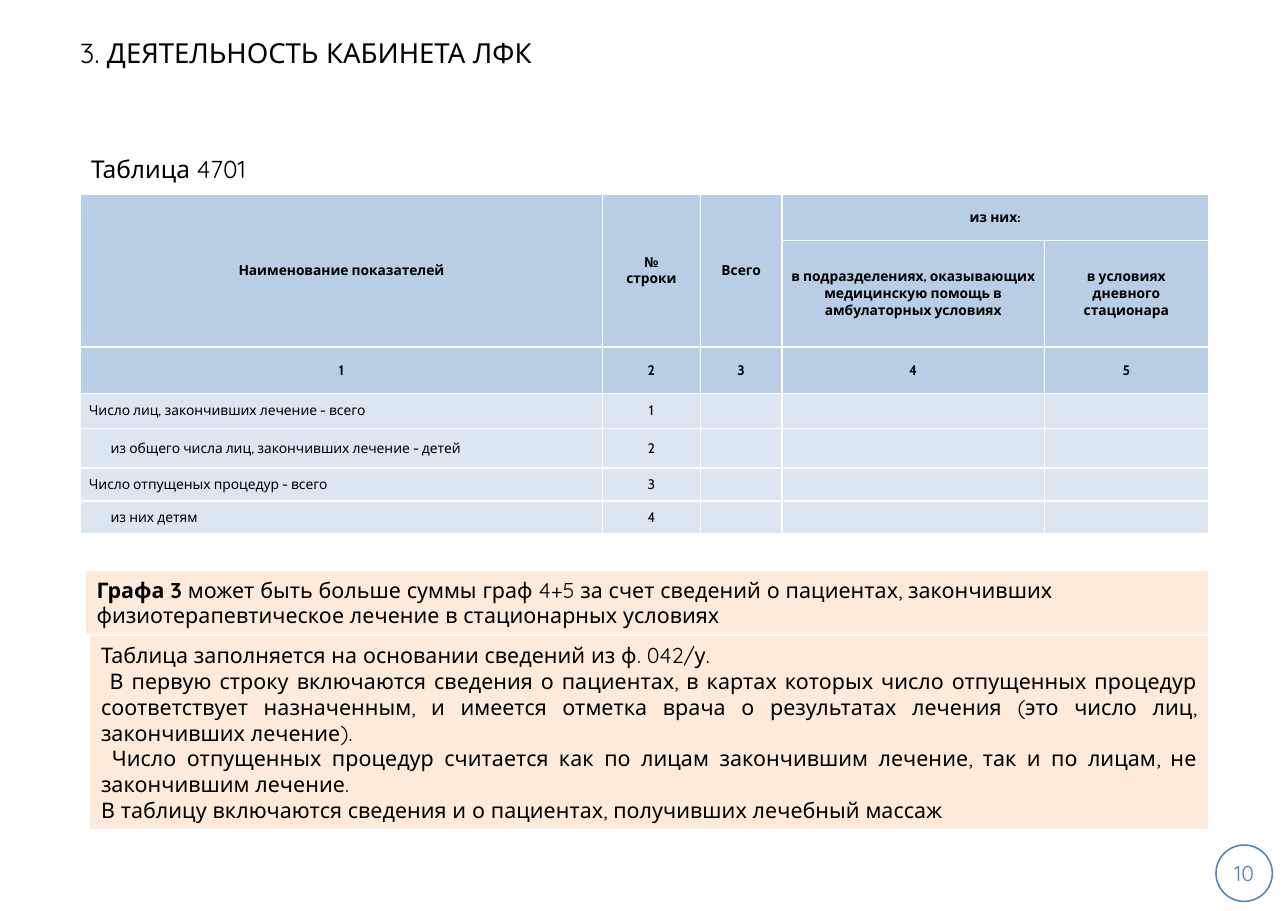
"""Builds the slide on table 4701, the work of the exercise therapy room."""
from lxml import etree
from pptx import Presentation
from pptx.dml.color import RGBColor
from pptx.enum import shapes, text
from pptx.oxml.ns import qn
from pptx.util import Cm, Pt

LEFT, CENTER, JUSTIFY = text.PP_ALIGN.LEFT, text.PP_ALIGN.CENTER, text.PP_ALIGN.JUSTIFY

TITLE = "3. ДЕЯТЕЛЬНОСТЬ КАБИНЕТА ЛФК"
CAPTION = "Таблица 4701"
PAGE = "10"
HEADINGS = [
    ["Наименование показателей", "№\nстроки", "Всего", "из них:", ""],
    ["", "", "", "в подразделениях, оказывающих медицинскую помощь в амбулаторных условиях",
     "в условиях дневного стационара"],
    ["1", "2", "3", "4", "5"],
]
INDICATORS = [
    ("Число лиц, закончивших лечение - всего", 0),
    ("из общего числа лиц, закончивших лечение - детей", 0.5),
    ("Число отпущеных процедур - всего", 0),
    ("из них детям", 0.5),
]
MERGES = [((0, 0), (1, 0)), ((0, 1), (1, 1)), ((0, 2), (1, 2)), ((0, 3), (0, 4))]
COLUMNS = [12.04, 2.26, 1.88, 6.05, 3.78]
ROWS = [1.07, 2.46, 1.07, 0.81, 0.91, 0.76, 0.76]
COLUMN_NOTE = ("Графа 3 ", "может быть больше суммы граф 4+5 за счет сведений о пациентах, "
               "закончивших физиотерапевтическое лечение в стационарных условиях")
FILLING_NOTE = [
    ("Таблица заполняется на основании сведений из ф. 042/у.", JUSTIFY, 0),
    ("В первую строку включаются сведения о пациентах, в картах которых число отпущенных "
     "процедур соответствует назначенным, и имеется отметка врача о результатах лечения "
     "(это число лиц, закончивших лечение).", JUSTIFY, 0.2),
    ("Число отпущенных процедур считается как по лицам закончившим лечение, так и по лицам, "
     "не закончившим лечение.", JUSTIFY, 0.25),
    ("В таблицу включаются сведения и о пациентах, получивших лечебный массаж", LEFT, 0),
]
THEME = {
    "font": "Quicksand", "table_font": "Cabin",
    "title": 18, "caption": 16, "body": 14, "table": 9,
    "ink": "000000", "accent": "4F81BD", "grid": "FFFFFF",
    "heading": "B9CDE5", "row": "DCE6F2", "note": "FDEADA",
}


def color(name):
    return RGBColor.from_string(THEME[name])


def write(paragraph, words, size="body", font="font", ink="ink", bold=False,
          align=LEFT, left=0, first=0):
    paragraph.alignment = align
    properties = paragraph._p.get_or_add_pPr()
    properties.set("marL", str(Cm(left)))
    properties.set("indent", str(Cm(first)))
    if not words:
        etree.SubElement(paragraph._p, qn("a:endParaRPr"), sz=str(THEME[size] * 100))
        return
    run = paragraph.add_run()
    run.text = words
    run.font.size, run.font.name, run.font.bold = Pt(THEME[size]), THEME[font], bold
    run.font.color.rgb = color(ink)


def frame_of(box, inset=None):
    frame = box.text_frame
    frame.word_wrap = True
    frame.vertical_anchor = text.MSO_ANCHOR.MIDDLE
    if inset is not None:
        frame.margin_left = frame.margin_right = Cm(inset)
        frame.margin_top = frame.margin_bottom = Cm(inset)
    return frame


def add_label(slide, place):
    return frame_of(slide.shapes.add_textbox(*map(Cm, place)))


def add_note(slide, place):
    panel = slide.shapes.add_shape(shapes.MSO_SHAPE.RECTANGLE, *map(Cm, place))
    panel.shadow.inherit = False
    panel.fill.solid()
    panel.fill.fore_color.rgb = color("note")
    panel.line.fill.background()
    frame = frame_of(panel)
    frame.auto_size = text.MSO_AUTO_SIZE.SHAPE_TO_FIT_TEXT
    return frame


def style_cell(cell, fill):
    properties = cell._tc.get_or_add_tcPr()
    for side in ("lnL", "lnR", "lnT", "lnB"):
        border = etree.SubElement(properties, qn(f"a:{side}"), w=str(Pt(1)))
        solid = etree.SubElement(border, qn("a:solidFill"))
        etree.SubElement(solid, qn("a:srgbClr"), val=THEME["grid"])
    cell.fill.solid()
    cell.fill.fore_color.rgb = color(fill)
    cell.vertical_anchor = text.MSO_ANCHOR.MIDDLE
    cell.margin_left = cell.margin_right = Cm(0.2)
    cell.margin_top = cell.margin_bottom = Cm(0.1)


def add_report(slide):
    report = slide.shapes.add_table(len(ROWS), len(COLUMNS), Cm(1.85), Cm(4.47),
                                    Cm(sum(COLUMNS)), Cm(sum(ROWS))).table
    report.first_row = report.horz_banding = False
    for column, width in zip(report.columns, COLUMNS):
        column.width = Cm(width)
    for row, height in zip(report.rows, ROWS):
        row.height = Cm(height)
    indicator_rows = [[name, str(number), "", "", ""]
                      for number, (name, _) in enumerate(INDICATORS, 1)]
    for r, entries in enumerate(HEADINGS + indicator_rows):
        heading = r < len(HEADINGS)
        for c, words in enumerate(entries):
            cell = report.cell(r, c)
            style_cell(cell, "heading" if heading else "row")
            named = c == 0 and not heading
            for i, line in enumerate(words.split("\n")):
                frame = cell.text_frame
                paragraph = frame.add_paragraph() if i else frame.paragraphs[0]
                write(paragraph, line, size="table", font="table_font", bold=heading,
                      align=LEFT if named else CENTER,
                      left=INDICATORS[r - len(HEADINGS)][1] if named else 0)
    for start, end in MERGES:
        report.cell(*start).merge(report.cell(*end))


def main():
    deck = Presentation()
    deck.slide_width, deck.slide_height = Cm(29.7), Cm(21)
    slide = deck.slides.add_slide(deck.slide_layouts[6])

    badge = slide.shapes.add_shape(shapes.MSO_SHAPE.OVAL, Cm(28.04), Cm(19.48), Cm(1.3), Cm(1.3))
    badge.shadow.inherit = False
    badge.fill.background()
    badge.line.color.rgb = color("accent")
    badge.line.width = Pt(1)
    write(frame_of(badge, inset=0).paragraphs[0], PAGE, ink="accent", align=CENTER)

    caption = add_label(slide, (1.85, 3.3, 26.01, 1.17))
    write(caption.paragraphs[0], CAPTION, size="caption")

    filling = add_note(slide, (2.08, 14.66, 25.78, 4.45))
    for i, (words, align, first) in enumerate(FILLING_NOTE):
        paragraph = filling.add_paragraph() if i else filling.paragraphs[0]
        write(paragraph, words, align=align, first=first)

    add_report(slide)

    column_note = add_note(slide, (1.98, 13.16, 25.88, 1.45)).paragraphs[0]
    for words, bold in zip(COLUMN_NOTE, (True, False)):
        write(column_note, words, bold=bold)

    title = add_label(slide, (1.85, 0, 27.85, 2.41))
    title.margin_left = Cm(0)
    write(title.paragraphs[0], TITLE, size="title")

    deck.save("out.pptx")


if __name__ == "__main__":
    main()
